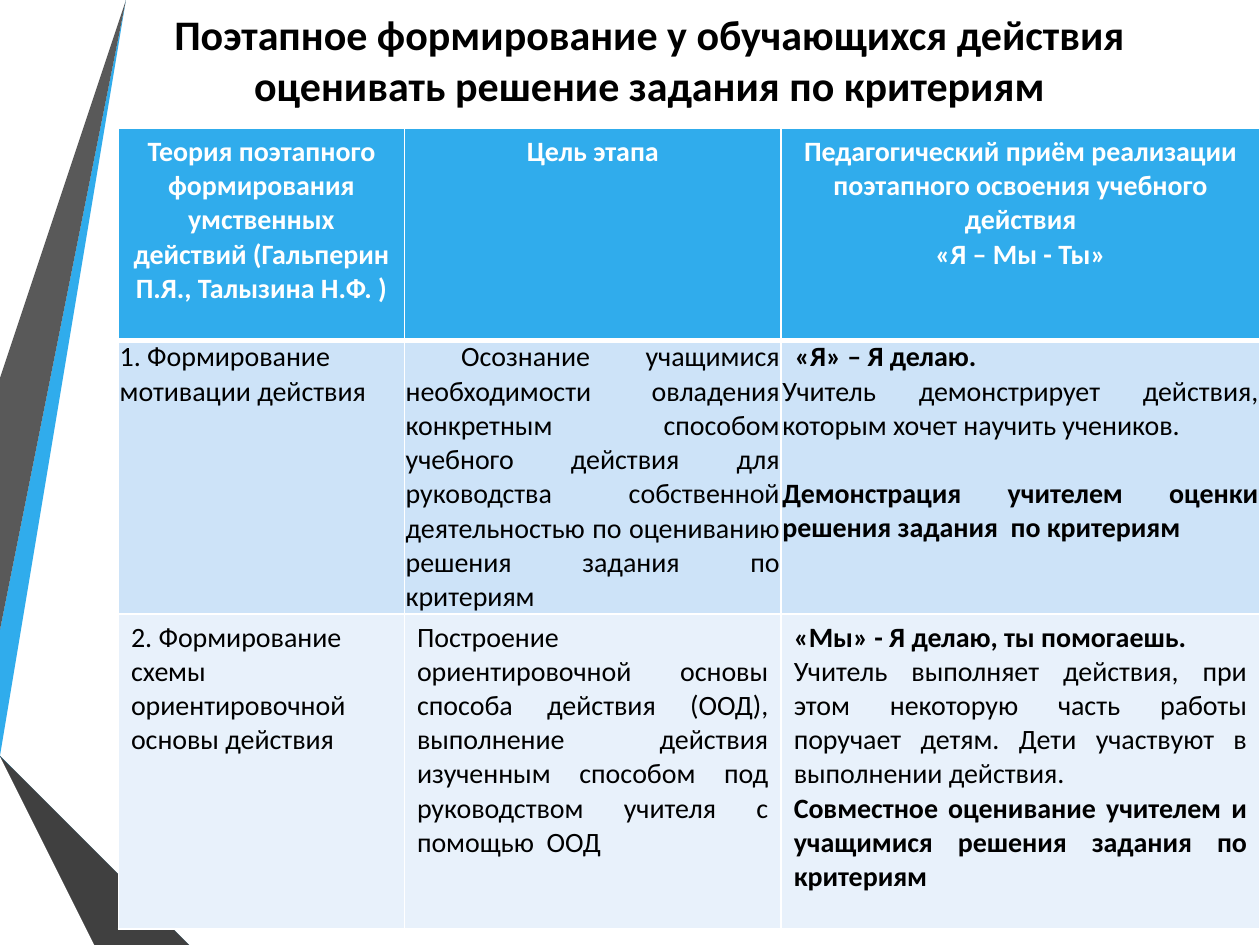
from dataclasses import dataclass
from lxml import etree
from pptx import Presentation
from pptx.dml.color import RGBColor as RGB
from pptx.enum.text import MSO_ANCHOR as Anchor, PP_ALIGN as Align
from pptx.oxml.ns import qn
from pptx.util import Inches, Pt


@dataclass(frozen=True)
class Theme:
    font: str = "Calibri"
    head: int = 24
    body: int = 16
    ink: str = "000000"
    white: str = "FFFFFF"
    sky: str = "30ACEC"
    blue: str = "1287C3"
    navy: str = "0C5A82"
    gray: str = "595959"
    dark: str = "404040"
    black: str = "262626"
    band: tuple = ("CDE3F8", "E8F1FB")


@dataclass(frozen=True)
class Para:
    text: str
    bold: bool = False
    align: Align = Align.JUSTIFY
    indent: float = 0
    gap: float = 0


THEME = Theme()
BANDS = [
    (THEME.sky, [(0, 5.44), (0, 5.75), (0.22, 5.79), (1.17, 0), (0.89, 0)]),
    (THEME.gray, [(0.83, 0), (0.55, 0), (0, 3.36), (0, 5.06)]),
    (THEME.black, [(0, 6.19), (0, 6.21), (0.93, 7.5), (0.99, 7.5)]),
    (THEME.navy, [(0, 5.79), (0, 5.8), (1.56, 7.5), (1.63, 7.5)]),
    (THEME.blue, [(0, 5.79), (1.63, 7.5), (2.33, 7.5), (0.22, 5.79), (0, 5.75)]),
    (THEME.dark, [(0, 6.19), (0.99, 7.5), (1.51, 7.5), (0, 5.86)]),
]
TITLE = "Поэтапное формирование у обучающихся действия оценивать решение задания по критериям"
HEADS = [
    ["Теория поэтапного формирования умственных действий (Гальперин П.Я., Талызина Н.Ф. )"],
    ["Цель этапа"],
    ["Педагогический приём реализации поэтапного освоения учебного действия",
     "«Я – Мы - Ты»"],
]
STAGES = [
    [
        [Para("1. Формирование мотивации действия", align=Align.LEFT)],
        [Para("Осознание учащимися необходимости овладения конкретным способом "
              "учебного действия для руководства собственной деятельностью по "
              "оцениванию решения задания по критериям", indent=0.44)],
        [Para("«Я» – Я делаю.", bold=True, indent=0.1),
         Para("Учитель демонстрирует действия, которым хочет научить учеников."),
         Para("Демонстрация учителем оценки решения задания  по критериям",
              bold=True, gap=19.5)],
    ],
    [
        [Para("2. Формирование схемы ориентировочной основы действия", align=Align.LEFT)],
        [Para("Построение ориентировочной основы способа действия (ООД), "
              "выполнение действия изученным способом под руководством учителя "
              "с помощью  ООД")],
        [Para("«Мы» - Я делаю, ты помогаешь.", bold=True),
         Para("Учитель выполняет действия, при этом некоторую часть работы "
              "поручает детям. Дети участвуют в выполнении действия."),
         Para("Совместное оценивание учителем и учащимися решения задания по критериям",
              bold=True)],
    ],
]


def style(para, size, color, bold, align):
    font = para.font
    font.name, font.size, font.bold = THEME.font, Pt(size), bold
    font.color.rgb = RGB.from_string(color)
    para.alignment = align


def add_bands(slide, left, top):
    for color, points in BANDS:
        pen = slide.shapes.build_freeform(*points[0], scale=Inches(1))
        pen.add_line_segments(points[1:], close=True)
        shape = pen.convert_to_shape(Inches(left), Inches(top))
        shape.shadow.inherit = False
        shape.fill.solid()
        shape.fill.fore_color.rgb = RGB.from_string(color)
        shape.line.fill.background()


def add_title(slide, left, top, width, height):
    title = slide.shapes.title
    title.left, title.top = Inches(left), Inches(top)
    title.width, title.height = Inches(width), Inches(height)
    frame = title.text_frame
    frame.text = TITLE
    frame.word_wrap = True
    frame.vertical_anchor = Anchor.MIDDLE
    style(frame.paragraphs[0], THEME.head, THEME.ink, True, Align.CENTER)


def set_edges(cell, top, base):
    props = cell._tc.get_or_add_tcPr()
    for side, width in (("L", 1), ("R", 1), ("T", top), ("B", base)):
        line = etree.SubElement(props, qn(f"a:ln{side}"), w=str(Pt(width)))
        fill = etree.SubElement(line, qn("a:solidFill"))
        etree.SubElement(fill, qn("a:srgbClr"), val=THEME.white)


def fill_cell(cell, paras, fill, color):
    cell.fill.solid()
    cell.fill.fore_color.rgb = RGB.from_string(fill)
    frame = cell.text_frame
    for i, item in enumerate(paras):
        para = frame.paragraphs[0] if i == 0 else frame.add_paragraph()
        para.text = item.text
        style(para, THEME.body, color, item.bold, item.align)
        if item.gap:
            para.space_before = Pt(item.gap)
        if item.indent:
            para._p.get_or_add_pPr().set("indent", str(Inches(item.indent)))


def add_stages(slide, left, top, width, height):
    cols, rows = (2.27, 2.99, 3.8), (1.68, 2.11, 2.5)
    table = slide.shapes.add_table(
        len(rows), len(cols), Inches(left), Inches(top), Inches(width), Inches(height)
    ).table
    for col, size in zip(table.columns, cols):
        col.width = Inches(size)
    for row, size in zip(table.rows, rows):
        row.height = Inches(size)
    for cell, texts in zip(table.rows[0].cells, HEADS):
        set_edges(cell, 1, 3)
        paras = [Para(text, bold=True, align=Align.CENTER) for text in texts]
        fill_cell(cell, paras, THEME.sky, THEME.white)
    for r, stage in enumerate(STAGES, 1):
        for cell, paras in zip(table.rows[r].cells, stage):
            set_edges(cell, 3 if r == 1 else 1, 1)
            fill_cell(cell, paras, THEME.band[r - 1], THEME.ink)
            if r == 1:
                cell.margin_left = cell.margin_right = Inches(0.01)
                cell.margin_top = cell.margin_bottom = 0


def main():
    deck = Presentation()
    deck.slide_width, deck.slide_height = Inches(10), Inches(7.5)
    slide = deck.slides.add_slide(deck.slide_layouts[5])
    add_bands(slide, 0, 0)
    add_title(slide, 1.09, 0, 8.13, 0.94)
    add_stages(slide, 0.94, 1.02, 9.06, 6.29)
    deck.save("out.pptx")


if __name__ == "__main__":
    main()
